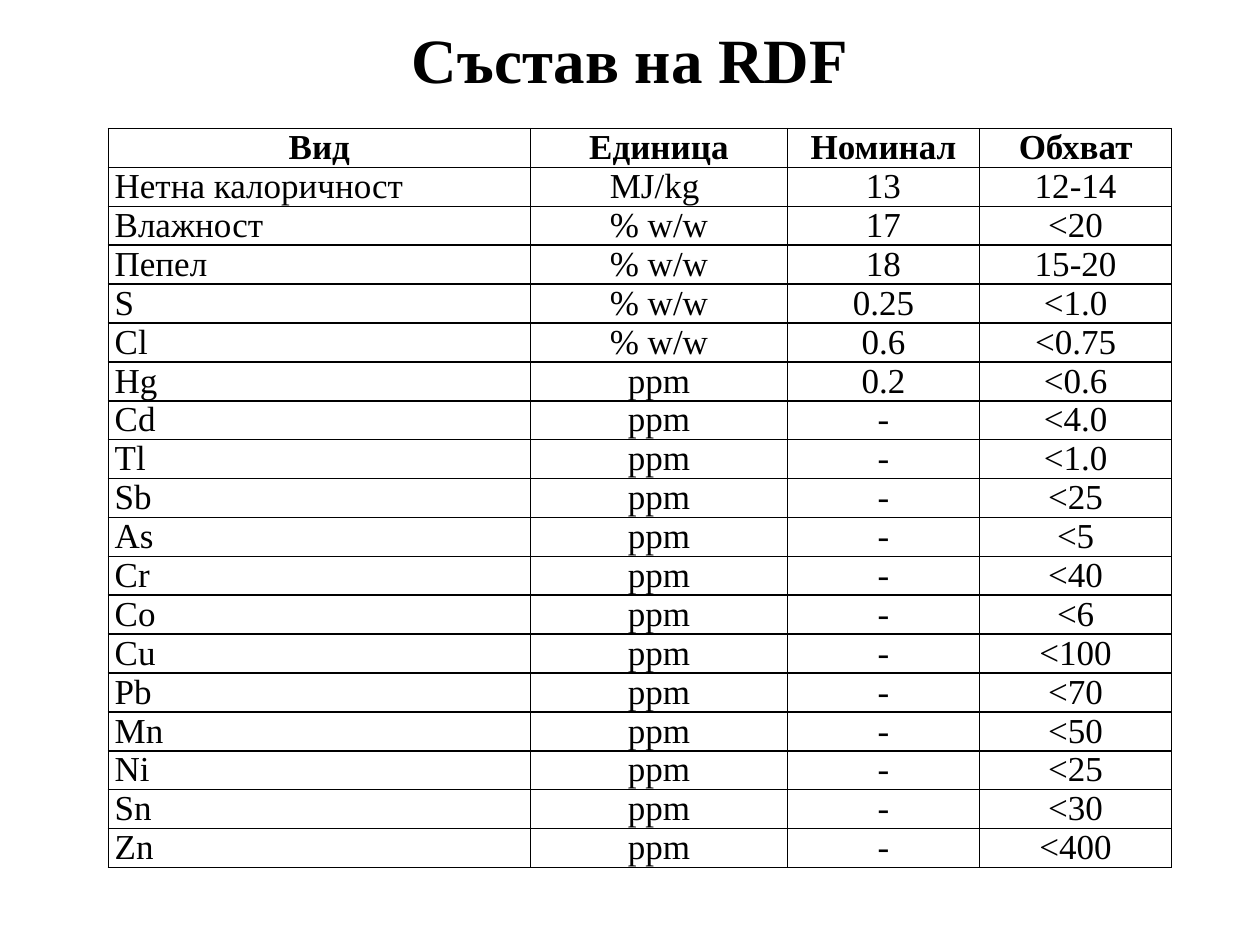
from lxml import etree
from pptx import Presentation, util as u
from pptx.dml.color import RGBColor
from pptx.enum import text
from pptx.oxml.ns import qn

FONT = "Times New Roman"
BLACK = "000000"
WIDTH, HEIGHT = 10, 7.5
TABLE_WIDTH, TABLE_HEIGHT = 8.44, 5.87
KIND_WIDTH, UNIT_WIDTH = 3.35, 2.04
VALUE_WIDTH = (TABLE_WIDTH - KIND_WIDTH - UNIT_WIDTH) / 2
COLUMN_WIDTHS = (KIND_WIDTH, UNIT_WIDTH, VALUE_WIDTH, VALUE_WIDTH)
HEADER = ("Вид", "Единица", "Номинал", "Обхват")
FUELS = [
    ("Нетна калоричност", "MJ/kg ", "13", "12-14"),
    ("Влажност", "% w/w", "17", "<20"),
    ("Пепел", "% w/w", "18", "15-20"),
    ("S", "% w/w", "0.25", "<1.0"),
    ("Cl", "% w/w", "0.6", "<0.75"),
    ("Hg", "ppm", "0.2", "<0.6"),
]
METAL_LIMITS = {
    "Cd": "<4.0", "Tl": "<1.0", "Sb": "<25", "As": "<5", "Cr": "<40", "Co": "<6",
    "Cu": "<100", "Pb": "<70", "Mn": "<50", "Ni": "<25", "Sn": "<30", "Zn": "<400",
}


def color(value):
    return RGBColor.from_string(value)


def write(paragraph, content, size, bold, centered):
    paragraph.text = content
    paragraph.alignment = text.PP_ALIGN.CENTER if centered else text.PP_ALIGN.LEFT
    font = paragraph.font
    font.name, font.size, font.bold = FONT, u.Pt(size), bold
    font.color.rgb = color(BLACK)


def add_title(slide, content):
    box = slide.shapes.add_textbox(
        u.Inches(0.05 * WIDTH), u.Inches(0.07), u.Inches(0.9 * WIDTH), u.Inches(0.79))
    frame = box.text_frame
    frame.word_wrap = True
    frame.vertical_anchor = text.MSO_ANCHOR.MIDDLE
    write(frame.paragraphs[0], content, 36, True, True)


def add_borders(cell):
    """Draw a thin line on all four sides; call before the cell gets its fill."""
    properties = cell._tc.get_or_add_tcPr()
    for side in ("lnL", "lnR", "lnT", "lnB"):
        line = etree.SubElement(properties, qn(f"a:{side}"), w=str(u.Pt(1)))
        fill = etree.SubElement(line, qn("a:solidFill"))
        etree.SubElement(fill, qn("a:srgbClr"), val=BLACK)


def format_cell(cell, content, bold, centered):
    add_borders(cell)
    cell.fill.background()
    cell.margin_left = cell.margin_right = u.Inches(0.05)
    cell.margin_top = cell.margin_bottom = 0
    cell.vertical_anchor = text.MSO_ANCHOR.MIDDLE
    paragraph = cell.text_frame.paragraphs[0]
    write(paragraph, content, 20, bold, centered)
    paragraph.line_spacing = u.Pt(22)


def add_composition_table(slide, rows):
    table = slide.shapes.add_table(
        len(rows), len(COLUMN_WIDTHS), u.Inches(0.86), u.Inches(1.02),
        u.Inches(TABLE_WIDTH), u.Inches(TABLE_HEIGHT)).table
    table.horz_banding = False
    table.first_row = False
    for column, width in zip(table.columns, COLUMN_WIDTHS):
        column.width = u.Inches(width)
    for r, row in enumerate(rows):
        for c, content in enumerate(row):
            format_cell(table.cell(r, c), content, r == 0, r == 0 or c > 0)


def main():
    presentation = Presentation()
    presentation.slide_width = u.Inches(WIDTH)
    presentation.slide_height = u.Inches(HEIGHT)
    slide = presentation.slides.add_slide(presentation.slide_layouts[6])
    add_title(slide, "Състав на RDF")
    metals = [(metal, "ppm", "-", limit) for metal, limit in METAL_LIMITS.items()]
    add_composition_table(slide, [HEADER, *FUELS, *metals])
    presentation.save("out.pptx")


if __name__ == "__main__":
    main()
